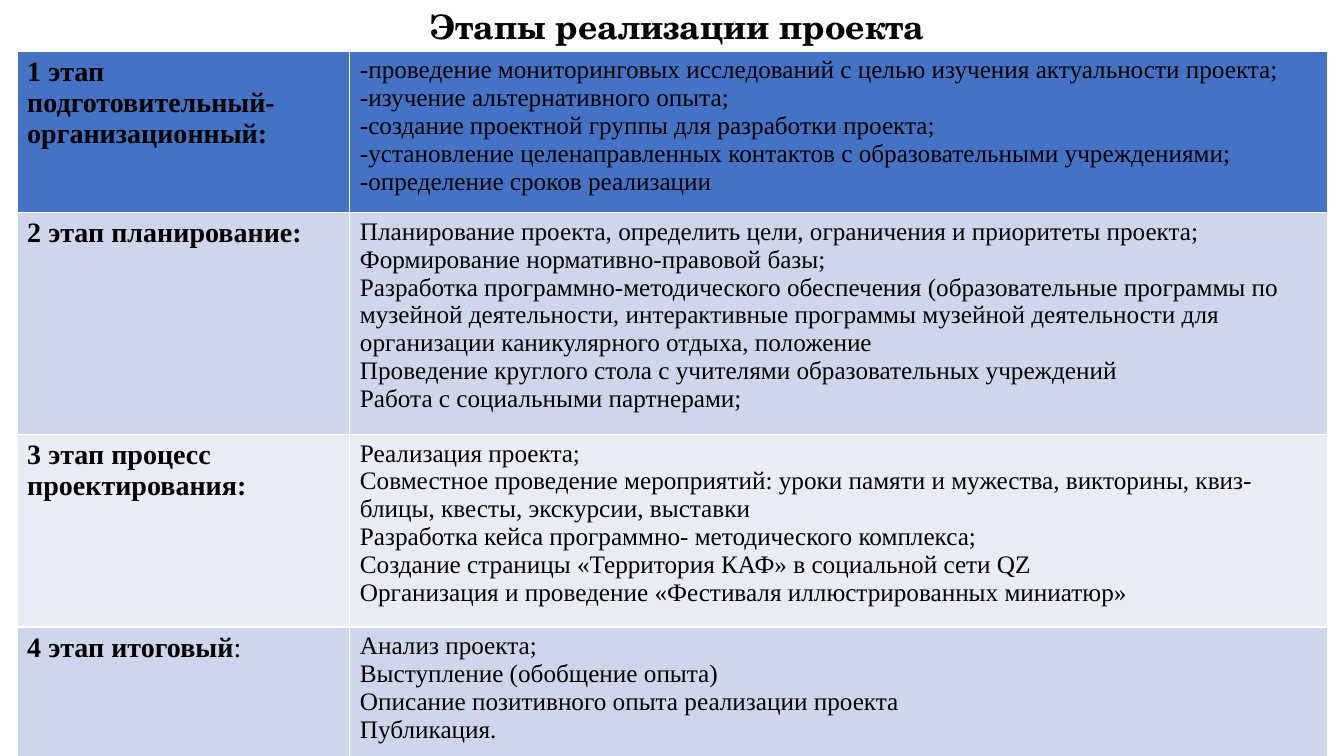
"""Build a slide with a table of the stages of a museum project."""
from dataclasses import dataclass

from pptx import Presentation
from pptx.dml.color import RGBColor
from pptx.enum.text import MSO_ANCHOR, MSO_AUTO_SIZE, PP_ALIGN
from pptx.util import Inches, Pt

CENTER = PP_ALIGN.CENTER
MIDDLE = MSO_ANCHOR.MIDDLE
GROW = MSO_AUTO_SIZE.SHAPE_TO_FIT_TEXT

COLORS = {"text": "000000", "header": "4472C4", "odd": "CFD5EA", "even": "E9EBF5"}
HEADING = {"name": "TeX Gyre Schola", "size": Pt(24), "bold": True}
STAGE_NAME = {"name": "Times New Roman", "size": Pt(20), "bold": True}
STAGE_COLON = {**STAGE_NAME, "bold": False}
STAGE_TASK = {**STAGE_COLON, "size": Pt(18)}
COLUMN_WIDTHS = (3.3, 9.7)


@dataclass(frozen=True)
class Stage:
    """One stage of the project, shown as a table row."""
    name: str
    tasks: tuple[str, ...]
    height: float
    fill: str
    suffix: str = ""


STAGES = (
    Stage("1 этап подготовительный-организационный:", (
        "-проведение мониторинговых исследований с целью изучения актуальности проекта;",
        "-изучение альтернативного опыта;",
        "-создание проектной группы для разработки проекта;",
        "-установление целенаправленных контактов с образовательными учреждениями;",
        "-определение сроков реализации",
    ), 1.59, "header"),
    Stage("2 этап планирование:", (
        "Планирование проекта, определить цели, ограничения и приоритеты проекта;",
        "Формирование нормативно-правовой базы;",
        "Разработка программно-методического обеспечения (образовательные программы "
        "по музейной деятельности, интерактивные программы музейной деятельности "
        "для организации каникулярного отдыха, положение",
        "Проведение круглого стола с учителями образовательных учреждений",
        "Работа с социальными партнерами;",
    ), 2.2, "odd"),
    Stage("3 этап процесс проектирования:", (
        "Реализация проекта;",
        "Совместное проведение мероприятий: уроки памяти и мужества, викторины, "
        "квиз-блицы, квесты, экскурсии, выставки",
        "Разработка кейса программно- методического комплекса;",
        "Создание страницы «Территория КАФ» в социальной сети QZ",
        "Организация и проведение «Фестиваля иллюстрированных миниатюр»",
    ), 1.91, "even"),
    Stage("4 этап итоговый", (
        "Анализ проекта;",
        "Выступление (обобщение опыта)",
        "Описание позитивного опыта реализации проекта",
        "Публикация.",
    ), 1.55, "odd", ":"),
)


def add_run(paragraph, text: str, font_format: dict) -> None:
    """Append formatted text to a paragraph."""
    run = paragraph.add_run()
    run.text = text
    for attribute, value in font_format.items():
        setattr(run.font, attribute, value)
    run.font.color.rgb = RGBColor.from_string(COLORS["text"])


def add_heading(slide, text: str) -> None:
    """Place the slide heading in the title placeholder."""
    heading = slide.shapes.title
    heading.left, heading.top = Inches(4.12), Inches(0.01)
    heading.width, heading.height = Inches(5.19), Inches(0.5)
    frame = heading.text_frame
    layout = {"word_wrap": False, "auto_size": GROW, "vertical_anchor": MIDDLE}
    for attribute, value in layout.items():
        setattr(frame, attribute, value)
    frame.paragraphs[0].alignment = CENTER
    add_run(frame.paragraphs[0], text, HEADING)


def fill_row(row, stage: Stage) -> None:
    """Write one stage into its table row."""
    row.height = Inches(stage.height)
    name_cell, tasks_cell = row.cells
    for cell in (name_cell, tasks_cell):
        cell.fill.solid()
        cell.fill.fore_color.rgb = RGBColor.from_string(COLORS[stage.fill])
    name_line = name_cell.text_frame.paragraphs[0]
    add_run(name_line, stage.name, STAGE_NAME)
    if stage.suffix:
        add_run(name_line, stage.suffix, STAGE_COLON)
    tasks = tasks_cell.text_frame
    for index, task in enumerate(stage.tasks):
        line = tasks.add_paragraph() if index else tasks.paragraphs[0]
        add_run(line, task, STAGE_TASK)


def add_stages(slide, stages: tuple[Stage, ...]) -> None:
    """Draw the table of stages."""
    height = sum(stage.height for stage in stages)
    table = slide.shapes.add_table(
        len(stages), len(COLUMN_WIDTHS), Inches(0.17), Inches(0.51),
        Inches(sum(COLUMN_WIDTHS)), Inches(height)).table
    for column, width in zip(table.columns, COLUMN_WIDTHS):
        column.width = Inches(width)
    for row, stage in zip(table.rows, stages):
        fill_row(row, stage)


def main() -> None:
    """Build and save the presentation."""
    presentation = Presentation()
    presentation.slide_width = Inches(13.33)
    presentation.slide_height = Inches(7.5)
    slide = presentation.slides.add_slide(presentation.slide_layouts[5])
    add_heading(slide, "Этапы реализации проекта")
    add_stages(slide, STAGES)
    presentation.save("out.pptx")


if __name__ == "__main__":
    main()
